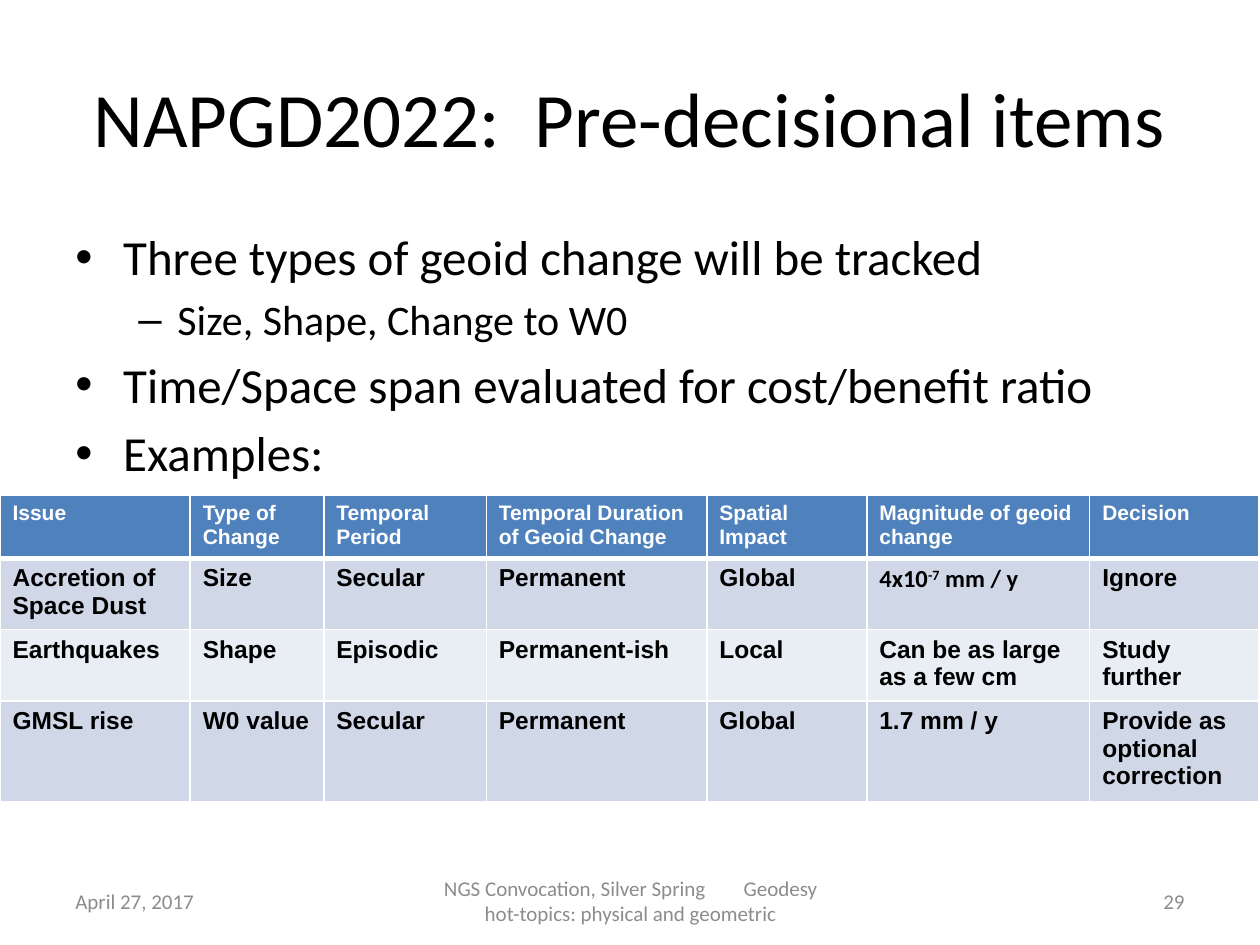
"""Build the slide on pre-decisional NAPGD2022 items."""
import pptx
import pptx.util
import pptx.dml.color
import pptx.enum.text
import pptx.oxml
import pptx.oxml.ns

Pt = pptx.util.Pt
ALIGN = pptx.enum.text.PP_ALIGN
ANCHOR = pptx.enum.text.MSO_ANCHOR
MARK = '<a:{} xmlns:a="http://schemas.openxmlformats.org/drawingml/2006/main" {}'

deck = pptx.Presentation()
deck.slide_width, deck.slide_height = pptx.util.Inches(10), pptx.util.Inches(7.5)
slide = deck.slides.add_slide(deck.slide_layouts[6])
col, row = deck.slide_width / 200, deck.slide_height / 150


def paint(item, tone, **form):
    """Give a font its colour and format values."""
    item.color.rgb = pptx.dml.color.RGBColor.from_string(tone)
    for key, value in form.items():
        setattr(item, key, value)


def frame(left, top, wide, high, anchor):
    """Add a wrapping text box placed in grid columns and rows."""
    box = slide.shapes.add_textbox(
        int(left * col), int(top * row), int(wide * col), int(high * row))
    text = box.text_frame
    text.word_wrap = True
    text.vertical_anchor = anchor
    return text


head = frame(10, 6, 180, 25, ANCHOR.MIDDLE).paragraphs[0]
head.text = "NAPGD2022:  Pre-decisional items"
head.alignment = ALIGN.CENTER
paint(head.font, "000000", size=Pt(44), name="Calibri")

points = [
    (0, "Three types of geoid change will be tracked"),
    (1, "Size, Shape, Change to W0"),
    (0, "Time/Space span evaluated for cost/benefit ratio"),
    (0, "Examples:"),
]
levels = [("•", 0.38, 0.38, 28), ("–", 0.81, 0.31, 24)]
body = frame(10, 35, 180, 99, ANCHOR.TOP)
for n, (level, words) in enumerate(points):
    sign, left, hang, size = levels[level]
    para = body.add_paragraph() if n else body.paragraphs[0]
    para.text = words
    para.level = level
    props = para._p.get_or_add_pPr()
    props.set("marL", str(pptx.util.Inches(left)))
    props.set("indent", str(-pptx.util.Inches(hang)))
    props.append(pptx.oxml.parse_xml(MARK.format("buFont", 'typeface="Arial"/>')))
    props.append(pptx.oxml.parse_xml(MARK.format("buChar", f'char="{sign}"/>')))
    para.space_before = Pt(0.2 * size if n else 0)
    paint(para.font, "000000", size=Pt(size), name="Calibri")

feet = [
    (10, 46.6, ALIGN.LEFT, ["April 27, 2017"]),
    (68.4, 63.4, ALIGN.CENTER, ["NGS Convocation, Silver Spring", " ",
                                "Geodesy hot-topics: physical and geometric"]),
    (143.4, 46.6, ALIGN.RIGHT, ["29"]),
]
for left, wide, align, parts in feet:
    para = frame(left, 139, wide, 8, ANCHOR.MIDDLE).paragraphs[0]
    para.alignment = align
    for part in parts:
        run = para.add_run()
        run.text = part
        paint(run.font, "8C8C8C", size=Pt(12), name="Calibri")
        if part == " ":
            run.font._element.set("spc", "1900")

rows = [
    ["Issue", "Type of Change", "Temporal Period", "Temporal Duration of Geoid Change",
     "Spatial Impact", "Magnitude of geoid change", "Decision"],
    ["Accretion of Space Dust", "Size", "Secular", "Permanent", "Global",
     "4x10^-7^ mm / y", "Ignore"],
    ["Earthquakes", "Shape", "Episodic", "Permanent-ish", "Local",
     "Can be as large as a few cm", "Study further"],
    ["GMSL rise", "W0 value", "Secular", "Permanent", "Global", "1.7 mm / y",
     "Provide as optional correction"],
]
spans = [30.2, 21.2, 25.8, 35, 25.4, 35.4, 26.8]
fills = ["4F81BD", "D0D8E8", "E9EDF4", "D0D8E8"]
grid = slide.shapes.add_table(len(rows), len(spans), 0, int(78.6 * row),
                              int(200 * col), int(32.8 * row)).table
grid.horz_banding = False
for n, span in enumerate(spans):
    grid.columns[n].width = int(span * col)
for r, line in enumerate(rows):
    grid.rows[r].height = int(8.2 * row)
    for c, words in enumerate(line):
        cell = grid.cell(r, c)
        cell.fill.solid()
        cell.fill.fore_color.rgb = pptx.dml.color.RGBColor.from_string(fills[r])
        pieces = words.split("^")
        for n, piece in enumerate(pieces):
            run = cell.text_frame.paragraphs[0].add_run()
            run.text = piece
            paint(run.font, "000000" if r else "FFFFFF", bold=True,
                  size=Pt(14 if r else 12),
                  name="Calibri" if len(pieces) > 1 else "Arial")
            if n == 1:
                run.font._element.set("baseline", "30000")
        for n, side in enumerate("LRTB"):
            thick = (r, side) in [(0, "B"), (1, "T")]
            edge = pptx.oxml.parse_xml(MARK.format(
                "ln" + side, f'w="{Pt(3 if thick else 1)}"><a:solidFill>'
                f'<a:srgbClr val="FFFFFF"/></a:solidFill></a:ln{side}>'))
            cell._tc.get_or_add_tcPr().insert(n, edge)

deck.save("out.pptx")
